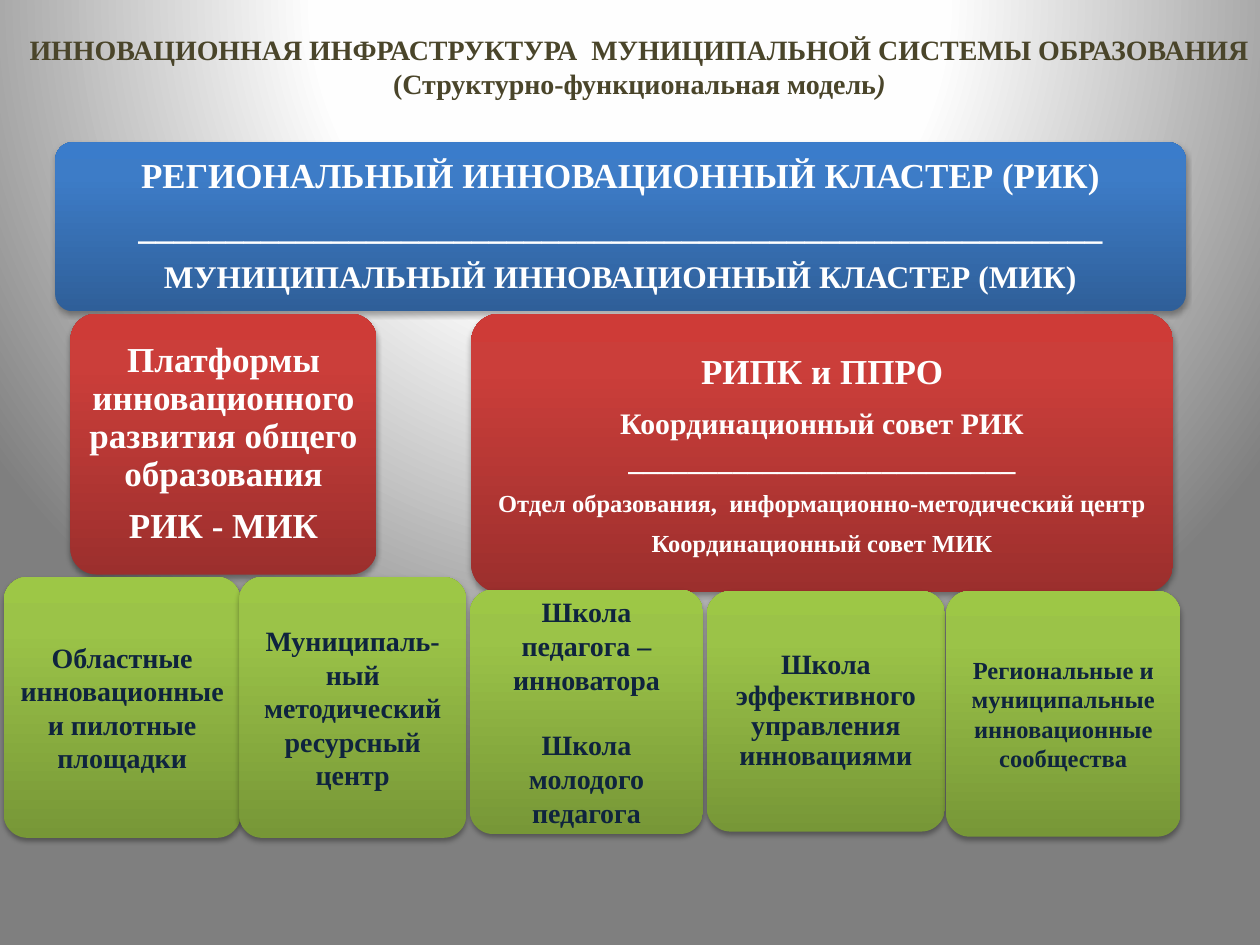
from pptx import Presentation
from pptx.dml.color import RGBColor
from pptx.enum.shapes import MSO_SHAPE
from pptx.enum.text import MSO_ANCHOR, MSO_AUTO_SIZE, PP_ALIGN
from pptx.oxml import parse_xml
from pptx.oxml.ns import nsdecls, qn
from pptx.util import Inches, Pt

FONT = "Times New Roman"
WHITE = RGBColor(0xFF, 0xFF, 0xFF)
NAVY = RGBColor(0x0F, 0x24, 0x3E)
OLIVE = RGBColor(0x4A, 0x45, 0x2A)


def stops(*pairs):
    return [(position, RGBColor.from_string(color)) for position, color in pairs]


BACKDROP = stops((0, "FFFFFF"), (40, "FEFEFE"), (100, "7F7F7F"))
BLUE = stops((0, "2F5F99"), (80, "3D7CC7"), (100, "3A7CCB"))
RED = stops((0, "9C2F2D"), (80, "CB3E3A"), (100, "CE3B37"))
GREEN = stops((0, "779737"), (80, "9BC348"), (100, "9DC746"))

UPWARD = '<a:lin ang="16200000" scaled="0"/>'
FROM_TOP = ('<a:path path="circle"><a:fillToRect l="50000" t="-80000" '
            'r="50000" b="180000"/></a:path>')
SHADOW = (f'<a:outerShdw {nsdecls("a")} blurRad="40000" dist="23000" dir="5400000" '
          'rotWithShape="0"><a:srgbClr val="000000"><a:alpha val="35000"/>'
          '</a:srgbClr></a:outerShdw>')


def apply_format(target, values):
    for name, value in values.items():
        setattr(target, name, value)


def paint_gradient(fill, owner, color_stops, direction):
    """Replace the default two-stop gradient with the given stops."""
    fill.gradient()
    default = next(owner.iter(qn("a:gradFill")))
    marks = "".join(f'<a:gs pos="{position * 1000}"><a:srgbClr val="{color}"/></a:gs>'
                    for position, color in color_stops)
    default.getparent().replace(default, parse_xml(
        f'<a:gradFill {nsdecls("a")} rotWithShape="1"><a:gsLst>{marks}</a:gsLst>'
        f'{direction}</a:gradFill>'))


def write_lines(frame, lines, color, spacing=1.0, before=0, after=0):
    """Lines are (text, size); the gap after a line is a share of its size."""
    for index, (text, size) in enumerate(lines):
        paragraph = frame.paragraphs[0] if index == 0 else frame.add_paragraph()
        apply_format(paragraph, {
            "alignment": PP_ALIGN.CENTER, "line_spacing": spacing,
            "space_before": Pt(before if index else 0),
            "space_after": Pt(round(size * after, 1))})
        run = paragraph.add_run()
        run.text = text
        apply_format(run.font, {"name": FONT, "size": Pt(size), "bold": True})
        run.font.color.rgb = color


def add_card(slide, box, color_stops, lines, color=WHITE, inset=0.08, **gaps):
    card = slide.shapes.add_shape(MSO_SHAPE.ROUNDED_RECTANGLE, *map(Inches, box))
    card.adjustments[0] = 0.1
    paint_gradient(card.fill, card.element.spPr, color_stops, UPWARD)
    card.line.fill.background()
    card.shadow.inherit = False
    card.element.spPr.find(qn("a:effectLst")).append(parse_xml(SHADOW))
    apply_format(card.text_frame, {
        "word_wrap": True, "vertical_anchor": MSO_ANCHOR.MIDDLE,
        "margin_left": Inches(inset), "margin_right": Inches(inset),
        "margin_top": 0, "margin_bottom": 0})
    write_lines(card.text_frame, lines, color, **gaps)


def add_heading(slide, box):
    title = slide.shapes.title
    apply_format(title, dict(zip(("left", "top", "width", "height"), map(Inches, box))))
    apply_format(title.text_frame, {
        "word_wrap": True, "auto_size": MSO_AUTO_SIZE.NONE,
        "vertical_anchor": MSO_ANCHOR.TOP, "margin_left": 0, "margin_right": 0,
        "margin_top": Inches(0.05), "margin_bottom": Inches(0.05)})
    write_lines(title.text_frame, [
        ("ИННОВАЦИОННАЯ ИНФРАСТРУКТУРА  МУНИЦИПАЛЬНОЙ СИСТЕМЫ ОБРАЗОВАНИЯ", 16),
        ("(Структурно-функциональная модель", 16)], OLIVE)
    # Italic closing bracket
    bracket = title.text_frame.paragraphs[-1].add_run()
    bracket.text = ")"
    apply_format(bracket.font, {"name": FONT, "size": Pt(16), "bold": True, "italic": True})
    bracket.font.color.rgb = OLIVE


def add_clusters(slide, box):
    add_card(slide, box, BLUE, [
        ("РЕГИОНАЛЬНЫЙ ИННОВАЦИОННЫЙ КЛАСТЕР (РИК)", 20),
        ("_" * 55, 20),
        ("МУНИЦИПАЛЬНЫЙ ИННОВАЦИОННЫЙ КЛАСТЕР (МИК)", 18)], spacing=0.9, after=0.4)


def add_coordination(slide, box):
    left, top, width, height = box
    platforms_width, councils_left = 2.43, 3.18
    add_card(slide, (left, top, platforms_width, height - 0.14), RED, [
        ("Платформы инновационного развития общего образования", 20),
        ("РИК - МИК", 20)], spacing=0.9, after=0.4)
    add_card(slide, (left + councils_left, top, width - councils_left, height), RED, [
        ("РИПК и ППРО", 20),
        ("Координационный совет РИК " + "_" * 26, 17),
        ("Отдел образования,  информационно-методический центр", 14),
        ("Координационный совет МИК", 14)], after=0.4)


def add_units(slide, box):
    left, top = box[:2]
    units = [  # offset x, offset y, width, height, size, texts, gaps
        (0, 0, 1.88, 2.07, 16,
         ["Областные инновационные и пилотные площадки"], {}),
        (1.87, 0, 1.8, 2.07, 16,
         ["Муниципаль-ный методический ресурсный центр"], {}),
        (3.7, 0.1, 1.85, 1.94, 16,
         ["Школа педагога – инноватора", "Школа молодого педагога"], {"before": 18.4}),
        (5.58, 0.11, 1.89, 1.91, 16,
         ["Школа эффективного управления инновациями"], {"spacing": 0.9, "after": 0.4}),
        (7.48, 0.11, 1.86, 1.95, 14,
         ["Региональные и муниципальные инновационные сообщества"], {}),
    ]
    for x, y, width, height, size, texts, gaps in units:
        add_card(slide, (left + x, top + y, width, height), GREEN,
                 [(text, size) for text in texts], NAVY, inset=0.07, **gaps)


def main():
    deck = Presentation()
    apply_format(deck, {"slide_width": Inches(10), "slide_height": Inches(7.5)})
    slide = deck.slides.add_slide(deck.slide_layouts[5])
    paint_gradient(slide.background.fill, slide.element, BACKDROP, FROM_TOP)

    add_clusters(slide, (0.44, 1.13, 8.97, 1.34))
    add_coordination(slide, (0.56, 2.49, 8.75, 2.21))
    add_units(slide, (0.03, 4.58, 9.34, 2.07))
    add_heading(slide, (0.15, 0.21, 9.85, 0.64))
    deck.save("out.pptx")


if __name__ == "__main__":
    main()
